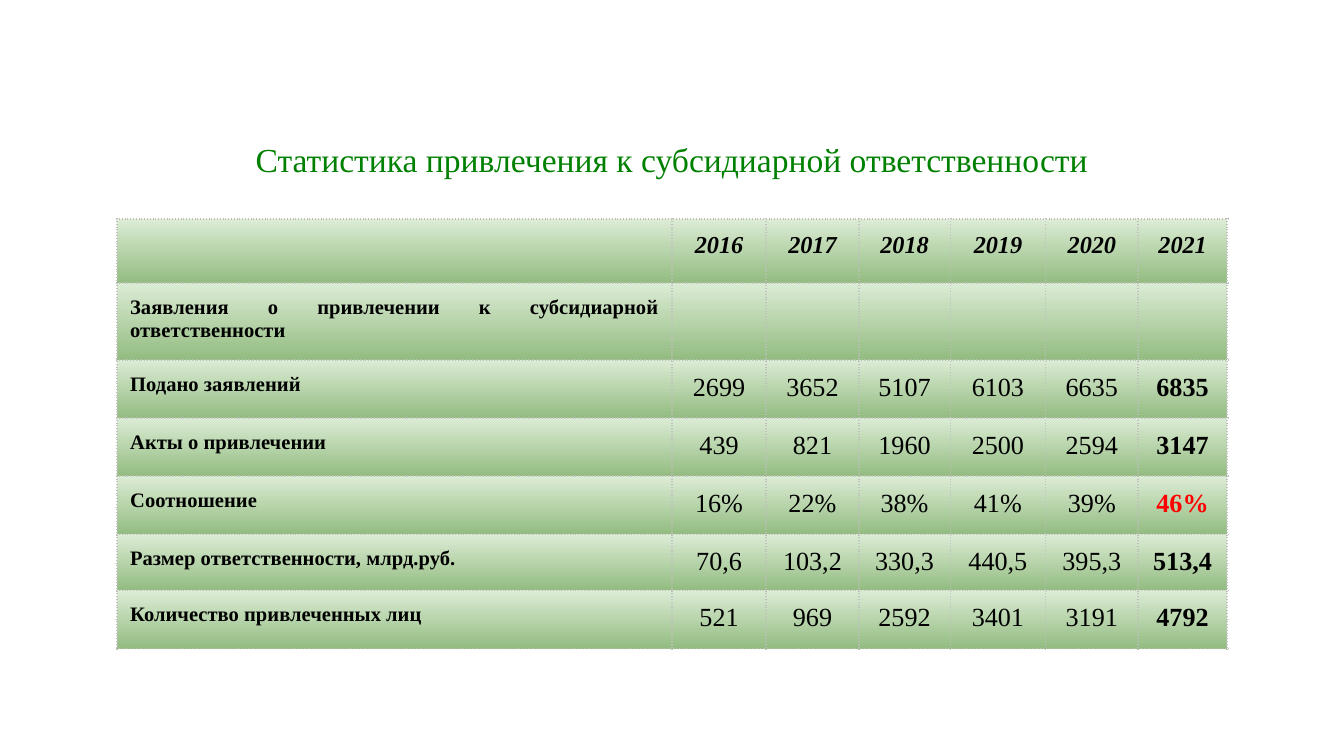
from lxml import etree
from pptx import Presentation
from pptx.dml.color import RGBColor
from pptx.enum.text import MSO_ANCHOR, MSO_AUTO_SIZE, PP_ALIGN
from pptx.oxml.ns import qn
from pptx.util import Cm, Pt

CENTER, JUSTIFY = PP_ALIGN.CENTER, PP_ALIGN.JUSTIFY
TOP, MIDDLE = MSO_ANCHOR.TOP, MSO_ANCHOR.MIDDLE
NO_FIT = MSO_AUTO_SIZE.NONE

FONT = "Times New Roman"
COLORS = {
    "title": "008000",
    "text": "000000",
    "accent": "FF0000",
    "light": "DCECD5",
    "dark": "93BC81",
    "border": "BFBFBF",
}

ROWS = [
    ["", "2016", "2017", "2018", "2019", "2020", "2021"],
    ["Заявления о привлечении к субсидиарной ответственности"] + [""] * 6,
    ["Подано заявлений", "2699", "3652", "5107", "6103", "6635", "6835"],
    ["Акты о привлечении", "439", "821", "1960", "2500", "2594", "3147"],
    ["Соотношение", "16%", "22%", "38%", "41%", "39%", "46%"],
    ["Размер ответственности, млрд.руб.",
     "70,6", "103,2", "330,3", "440,5", "395,3", "513,4"],
    ["Количество привлеченных лиц",
     "521", "969", "2592", "3401", "3191", "4792"],
]
COL_WIDTHS = [10.49, 1.78, 1.75, 1.73, 1.8, 1.75, 1.68]
ROW_HEIGHTS = [1.21, 1.45, 1.1, 1.1, 1.1, 1.06, 1.1]
RATIO_ROW = 4


def rgb(name):
    return RGBColor.from_string(COLORS[name])


def write(tf, text, size, color="text", bold=False, italic=False, align=CENTER):
    p = tf.paragraphs[0]
    p.alignment = align
    p.font.size = Pt(size)
    if not text:
        # The end mark carries the size of an empty cell
        end = etree.SubElement(p._p, qn("a:endParaRPr"))
        end.set("sz", str(size * 100))
        return
    r = p.add_run()
    r.text = text
    font = r.font
    font.name, font.size = FONT, Pt(size)
    font.bold, font.italic = bold, italic
    font.color.rgb = rgb(color)


def set_borders(cell):
    tc_pr = cell._tc.get_or_add_tcPr()
    for i, side in enumerate(("lnL", "lnR", "lnT", "lnB")):
        ln = etree.Element(qn(f"a:{side}"), w=str(Pt(1)))
        fill = etree.SubElement(ln, qn("a:solidFill"))
        etree.SubElement(fill, qn("a:srgbClr"), val=COLORS["border"])
        etree.SubElement(ln, qn("a:prstDash"), val="dot")
        tc_pr.insert(i, ln)


def style_cell(cell):
    cell.margin_left = cell.margin_right = Cm(0.25)
    cell.margin_top = cell.margin_bottom = Cm(0.25)
    cell.vertical_anchor = TOP
    cell.fill.gradient()
    cell.fill.gradient_angle = 270
    for stop, name in zip(cell.fill.gradient_stops, ("light", "dark")):
        stop.color.rgb = rgb(name)
    set_borders(cell)


def cell_format(row, col):
    if row == 0:
        return dict(size=13, bold=True, italic=True)
    if col == 0:
        return dict(size=11, bold=True, align=JUSTIFY)
    last = col == len(COL_WIDTHS) - 1
    color = "accent" if last and row == RATIO_ROW else "text"
    return dict(size=14, bold=last, color=color)


def add_title(s, left, top, width, height):
    sp = s.shapes.title
    sp.left, sp.top, sp.width, sp.height = left, top, width, height
    tf = sp.text_frame
    tf.word_wrap = True
    tf.auto_size = NO_FIT
    tf.vertical_anchor = MIDDLE
    write(tf, "Статистика привлечения к субсидиарной ответственности",
          18, color="title")


def add_statistics(s, left, top, width, height):
    table = s.shapes.add_table(len(ROWS), len(COL_WIDTHS),
                               left, top, width, height).table
    table.first_row = table.horz_banding = False
    for column, w in zip(table.columns, COL_WIDTHS):
        column.width = Cm(w)
    for row, h in zip(table.rows, ROW_HEIGHTS):
        row.height = Cm(h)
    for i, values in enumerate(ROWS):
        for j, value in enumerate(values):
            cell = table.cell(i, j)
            style_cell(cell)
            write(cell.text_frame, value, **cell_format(i, j))


def main():
    prs = Presentation()
    prs.slide_width, prs.slide_height = Cm(25.4), Cm(14.29)
    s = prs.slides.add_slide(prs.slide_layouts[5])

    # Yearly statistics
    add_statistics(s, Cm(2.21), Cm(4.14),
                   Cm(sum(COL_WIDTHS)), Cm(sum(ROW_HEIGHTS)))
    # Heading above the table
    add_title(s, Cm(4.24), Cm(2.49), Cm(16.92), Cm(1.02))

    prs.save("out.pptx")


if __name__ == "__main__":
    main()
